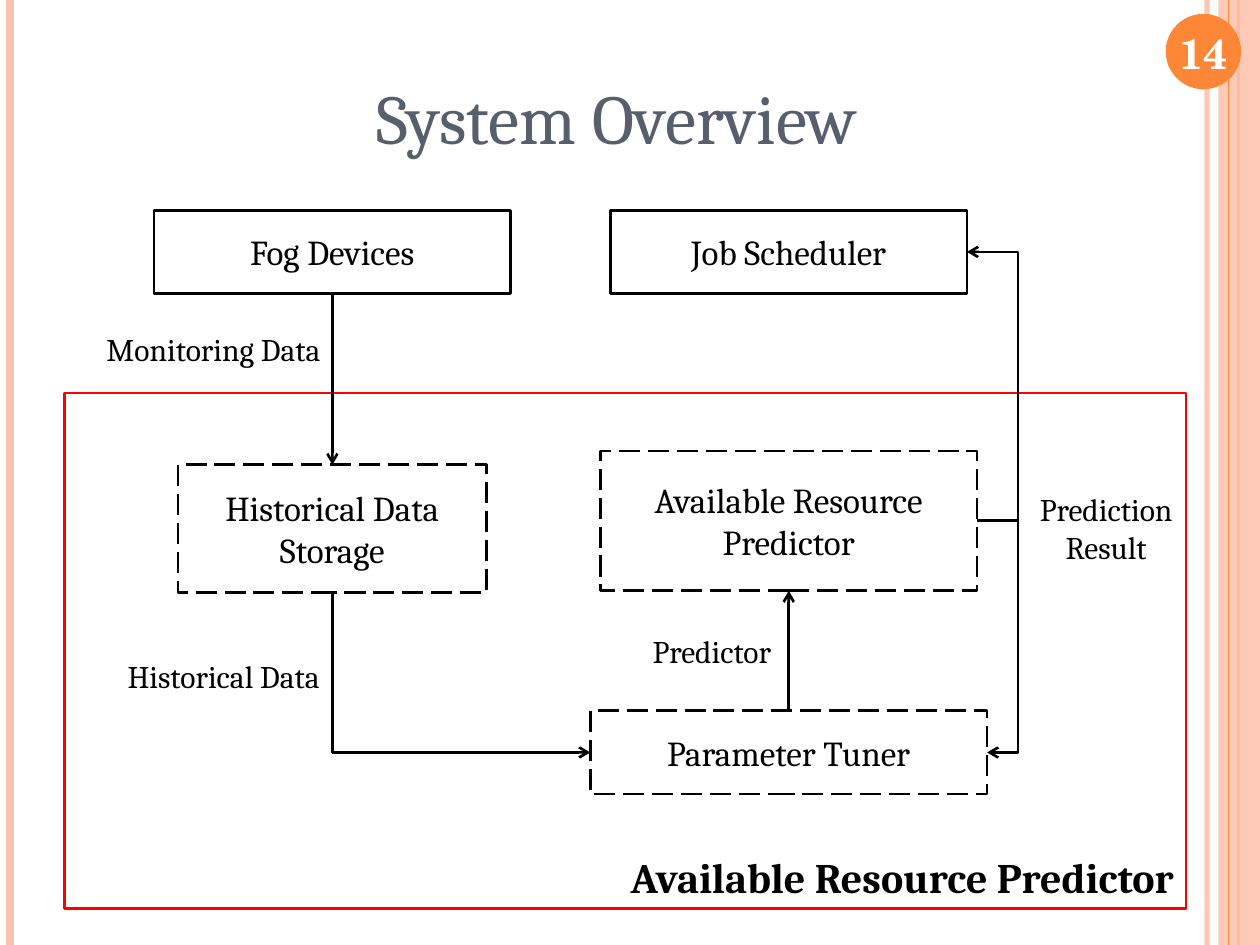
"""Build the System Overview slide with its resource predictor flow."""
from dataclasses import dataclass

from lxml import etree
from pptx import Presentation
from pptx.dml.color import RGBColor
from pptx.enum.dml import MSO_LINE
from pptx.enum.shapes import MSO_CONNECTOR, MSO_SHAPE
from pptx.enum.text import MSO_ANCHOR, PP_ALIGN
from pptx.oxml.ns import qn
from pptx.util import Cm, Pt

RECTANGLE, OVAL = MSO_SHAPE.RECTANGLE, MSO_SHAPE.OVAL
STRAIGHT, ELBOW = MSO_CONNECTOR.STRAIGHT, MSO_CONNECTOR.ELBOW
LONG_DASH = MSO_LINE.LONG_DASH
MIDDLE, BOTTOM = MSO_ANCHOR.MIDDLE, MSO_ANCHOR.BOTTOM
CENTER, RIGHT = PP_ALIGN.CENTER, PP_ALIGN.RIGHT
TITLE_ONLY = 5
WIDTH, HEIGHT = 25.4, 19.05


@dataclass(frozen=True)
class Theme:
    font: str = "Cambria"
    number_font: str = "TeX Gyre Schola"
    ink: str = "000000"
    white: str = "FFFFFF"
    title: str = "575F6D"
    orange: str = "FE8637"
    peach: str = "FEC3AE"
    red: str = "FF0000"
    title_size: int = 40
    heading_size: int = 24
    box_size: int = 20
    label_size: int = 18
    line_width: float = 1.5
    space_before: int = 6


class SlideBuilder:
    def __init__(self, slide, theme):
        self.slide = slide
        self.theme = theme

    def set_text(self, shape, text, size, color=None, font=None, bold=False,
                 align=CENTER, anchor=MIDDLE, space=None):
        frame = shape.text_frame
        frame.text = text
        frame.word_wrap = True
        frame.vertical_anchor = anchor
        paragraph = frame.paragraphs[0]
        paragraph.alignment = align
        paragraph.space_before = Pt(self.theme.space_before if space is None else space)
        for run in paragraph.runs:
            run.font.name = font or self.theme.font
            run.font.size = Pt(size)
            run.font.bold = bold
            run.font.color.rgb = RGBColor.from_string(color or self.theme.ink)

    def title(self, text, bounds):
        shape = self.slide.shapes.title
        shape.left, shape.top, shape.width, shape.height = map(Cm, bounds)
        self.set_text(shape, text, self.theme.title_size, self.theme.title, space=0)

    def label(self, text, bounds, **style):
        shape = self.slide.shapes.add_textbox(*map(Cm, bounds))
        self.set_text(shape, text, **{"size": self.theme.label_size, **style})

    def set_opacity(self, element, percent):
        color = element.find(".//" + qn("a:srgbClr"))
        etree.SubElement(color, qn("a:alpha"), val=str(percent * 1000))

    def panel(self, kind, bounds, color, opacity=100):
        shape = self.slide.shapes.add_shape(kind, *map(Cm, bounds))
        shape.shadow.inherit = False
        shape.fill.solid()
        shape.fill.fore_color.rgb = RGBColor.from_string(color)
        shape.line.fill.background()
        if opacity < 100:
            self.set_opacity(shape._element.spPr, opacity)

    def outline(self, bounds, color, dash=None):
        shape = self.slide.shapes.add_shape(RECTANGLE, *map(Cm, bounds))
        shape.shadow.inherit = False
        shape.fill.background()
        shape.line.color.rgb = RGBColor.from_string(color)
        shape.line.width = Pt(self.theme.line_width)
        if dash:
            shape.line.dash_style = dash
        return shape

    def box(self, text, center, top, width, height, dash=None):
        bounds = (center - width / 2, top, width, height)
        shape = self.outline(bounds, self.theme.ink, dash)
        self.set_text(shape, text, self.theme.box_size)
        return shape

    def line(self, kind, begin, end, color=None, width=None, arrow=None):
        connector = self.slide.shapes.add_connector(kind, *begin, *end)
        connector.line.color.rgb = RGBColor.from_string(color or self.theme.ink)
        connector.line.width = Pt(width or self.theme.line_width)
        properties = connector._element.spPr
        etree.SubElement(properties, qn("a:effectLst"))
        if arrow:
            etree.SubElement(properties.find(qn("a:ln")), qn(arrow), type="arrow")
        return connector

    def stripe(self, x, color, width, opacity=100):
        connector = self.line(STRAIGHT, (Cm(x), 0), (Cm(x), Cm(HEIGHT)), color, width)
        if opacity < 100:
            self.set_opacity(connector._element.spPr, opacity)

    def arrow(self, begin, end):
        self.line(STRAIGHT, begin, end, arrow="a:tailEnd")

    def corner(self, begin, end):
        connector = self.line(ELBOW, end, begin, arrow="a:headEnd")
        connector._element.spPr.find(qn("a:prstGeom")).set("prst", "bentConnector2")

    def detour(self, begin, end, lane):
        connector = self.line(ELBOW, begin, end, arrow="a:tailEnd")
        bend = round((lane - begin[0]) / (end[0] - begin[0]) * 100000)
        geometry = connector._element.spPr.find(qn("a:prstGeom"))
        guides = geometry.find(qn("a:avLst"))
        if guides is None:
            guides = etree.SubElement(geometry, qn("a:avLst"))
        etree.SubElement(guides, qn("a:gd"), name="adj1", fmla=f"val {bend}")


def side(shape, across, down):
    """Return the point at the given fractions of a shape's width and height."""
    return (round(shape.left + shape.width * across),
            round(shape.top + shape.height * down))


def main():
    theme = Theme()
    presentation = Presentation()
    presentation.slide_width, presentation.slide_height = Cm(WIDTH), Cm(HEIGHT)
    slide = presentation.slides.add_slide(presentation.slide_layouts[TITLE_ONLY])
    builder = SlideBuilder(slide, theme)

    builder.stripe(24.33, theme.peach, 3, opacity=93)
    builder.stripe(0.2, theme.peach, 4.5)
    builder.stripe(24.97, theme.orange, 1.5)
    builder.panel(RECTANGLE, (24.56, 0, 0.84, HEIGHT), theme.peach, opacity=87)
    builder.stripe(24.77, theme.orange, 0.75)
    builder.panel(OVAL, (23.5, 0.28, 1.52, 1.52), theme.orange)
    builder.label("14", (23.42, 0.33, 1.7, 1.45), size=theme.heading_size,
                  color=theme.white, font=theme.number_font, bold=True, space=0)
    builder.title("System Overview", (0.51, 0.76, 23.85, 3.18))

    left, right, lane = 6.7, 15.9, Cm(20.52)
    devices = builder.box("Fog Devices", left, 4.24, 7.19, 1.68)
    scheduler = builder.box("Job Scheduler", right, 4.24, 7.19, 1.68)
    storage = builder.box("Historical Data Storage", left, 9.37, 6.22, 2.57, LONG_DASH)
    predictor = builder.box("Available Resource Predictor", right, 9.09, 7.59, 2.82,
                            LONG_DASH)
    tuner = builder.box("Parameter Tuner", right, 14.33, 8, 1.68, LONG_DASH)

    frame = builder.outline((1.3, 7.92, 22.61, 10.39), theme.red)
    builder.set_text(frame, "Available Resource Predictor", theme.heading_size,
                     bold=True, align=RIGHT, anchor=BOTTOM)

    builder.arrow(side(devices, 0.5, 1), side(storage, 0.5, 0))
    builder.arrow(side(tuner, 0.5, 0), side(predictor, 0.5, 1))
    builder.corner(side(storage, 0.5, 1), side(tuner, 0, 0.5))
    for target in (scheduler, tuner):
        builder.detour(side(predictor, 1, 0.5), side(target, 1, 0.5), lane)

    for text, bounds in (
        ("Monitoring Data", (1.7, 6.53, 5.21, 0.99)),
        ("Historical Data", (2.21, 13.13, 4.6, 0.99)),
        ("Predictor", (12.8, 12.62, 3.1, 0.99)),
        ("Prediction Result", (20.47, 9.75, 3.66, 1.8)),
    ):
        builder.label(text, bounds)

    presentation.save("out.pptx")


if __name__ == "__main__":
    main()
